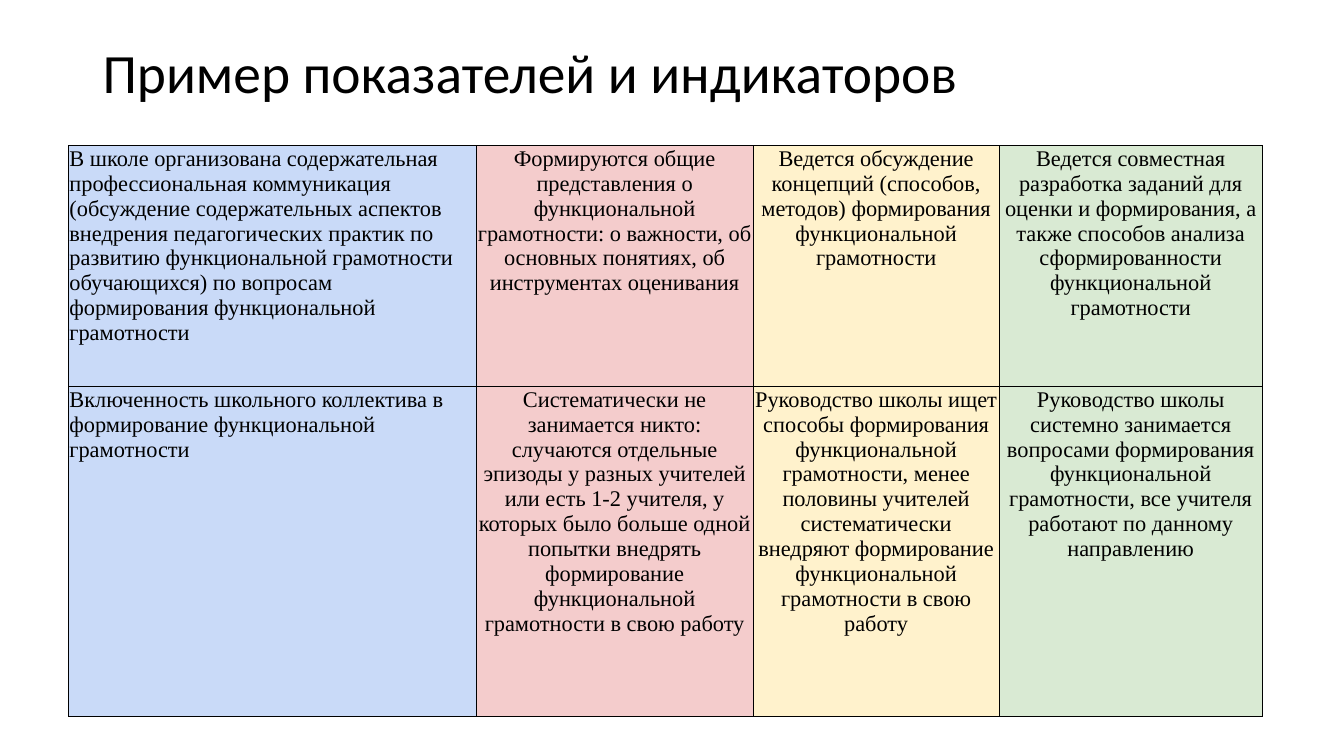
from lxml.etree import SubElement
from pptx import Presentation
from pptx.dml.color import RGBColor
from pptx.enum.text import MSO_ANCHOR as Anchor, MSO_AUTO_SIZE as AutoSize, PP_ALIGN as Align
from pptx.oxml.ns import qn
from pptx.util import Cm, Pt

# Content: one column per level, one row per indicator
COL_WIDTHS = [10.27, 6.98, 6.2, 6.63]
ROW_HEIGHTS = [6.07, 8.31]
COL_FILLS = ["C9DAF8", "F4CCCC", "FFF2CC", "D9EAD3"]
INDICATORS = [
    [
        "В школе организована содержательная профессиональная коммуникация "
        "(обсуждение содержательных аспектов внедрения педагогических практик "
        "по развитию функциональной грамотности обучающихся) по вопросам "
        "формирования функциональной грамотности",
        "Формируются общие представления о функциональной грамотности: "
        "о важности, об основных понятиях, об инструментах оценивания",
        "Ведется обсуждение концепций (способов, методов) формирования "
        "функциональной грамотности",
        "Ведется совместная разработка заданий для оценки и формирования, "
        "а также способов анализа сформированности функциональной грамотности",
    ],
    [
        "Включенность школьного коллектива в формирование функциональной грамотности",
        "Систематически не занимается никто: случаются отдельные эпизоды "
        "у разных учителей или есть 1-2 учителя, у которых было больше одной "
        "попытки внедрять формирование функциональной грамотности в свою работу",
        "Руководство школы ищет способы формирования функциональной грамотности, "
        "менее половины учителей систематически внедряют формирование "
        "функциональной грамотности в свою работу",
        "Руководство школы системно занимается вопросами формирования "
        "функциональной грамотности, все учителя работают по данному направлению",
    ],
]


def rgb(value):
    return RGBColor.from_string(value)


class SlideBuilder:
    ink = "000000"
    title_font, title_size = "Calibri", 39.6
    table_font, table_size = "Times New Roman", 16
    border_width = 0.5

    def __init__(self, prs):
        self.s = prs.slides.add_slide(prs.slide_layouts[5])

    def style(self, p, font, size, align):
        p.alignment = align
        p.font.name = font
        p.font.size = Pt(size)
        p.font.color.rgb = rgb(self.ink)

    def title(self, text, left, top, width, height):
        sp = self.s.shapes.title
        sp.left, sp.top, sp.width, sp.height = Cm(left), Cm(top), Cm(width), Cm(height)
        tf = sp.text_frame
        tf.text = text
        tf.auto_size = AutoSize.NONE
        tf.vertical_anchor = Anchor.MIDDLE
        p = tf.paragraphs[0]
        p.line_spacing = 0.9
        self.style(p, self.title_font, self.title_size, Align.LEFT)

    def borders(self, cell):
        tc_pr = cell._tc.get_or_add_tcPr()
        for side in ("a:lnL", "a:lnR", "a:lnT", "a:lnB"):
            ln = SubElement(tc_pr, qn(side), w=str(Pt(self.border_width)))
            fill = SubElement(ln, qn("a:solidFill"))
            SubElement(fill, qn("a:srgbClr"), val=self.ink)

    def cell(self, cell, text, fill, align):
        cell.text = text
        cell.margin_left = cell.margin_right = cell.margin_top = Cm(0.02)
        cell.margin_bottom = 0
        cell.vertical_anchor = Anchor.TOP
        self.style(cell.text_frame.paragraphs[0], self.table_font, self.table_size, align)
        self.borders(cell)
        cell.fill.solid()
        cell.fill.fore_color.rgb = rgb(fill)

    def table(self, rows, left, top, widths, heights, fills):
        frame = self.s.shapes.add_table(len(rows), len(widths), Cm(left), Cm(top),
                                        Cm(sum(widths)), Cm(sum(heights)))
        tbl = frame.table
        tbl.first_row = tbl.horz_banding = False
        for col, width in zip(tbl.columns, widths):
            col.width = Cm(width)
        for r, (texts, height) in enumerate(zip(rows, heights)):
            tbl.rows[r].height = Cm(height)
            for c, (text, fill) in enumerate(zip(texts, fills)):
                align = Align.CENTER if c else Align.LEFT
                self.cell(tbl.cell(r, c), text, fill, align)


def main():
    prs = Presentation()
    prs.slide_width, prs.slide_height = Cm(33.87), Cm(19.05)
    slide = SlideBuilder(prs)

    # Heading
    slide.title("Пример показателей и индикаторов", 2.33, 1.02, 29.21, 1.75)

    # Indicator table
    slide.table(INDICATORS, 1.73, 3.67, COL_WIDTHS, ROW_HEIGHTS, COL_FILLS)

    prs.save("out.pptx")


if __name__ == "__main__":
    main()
